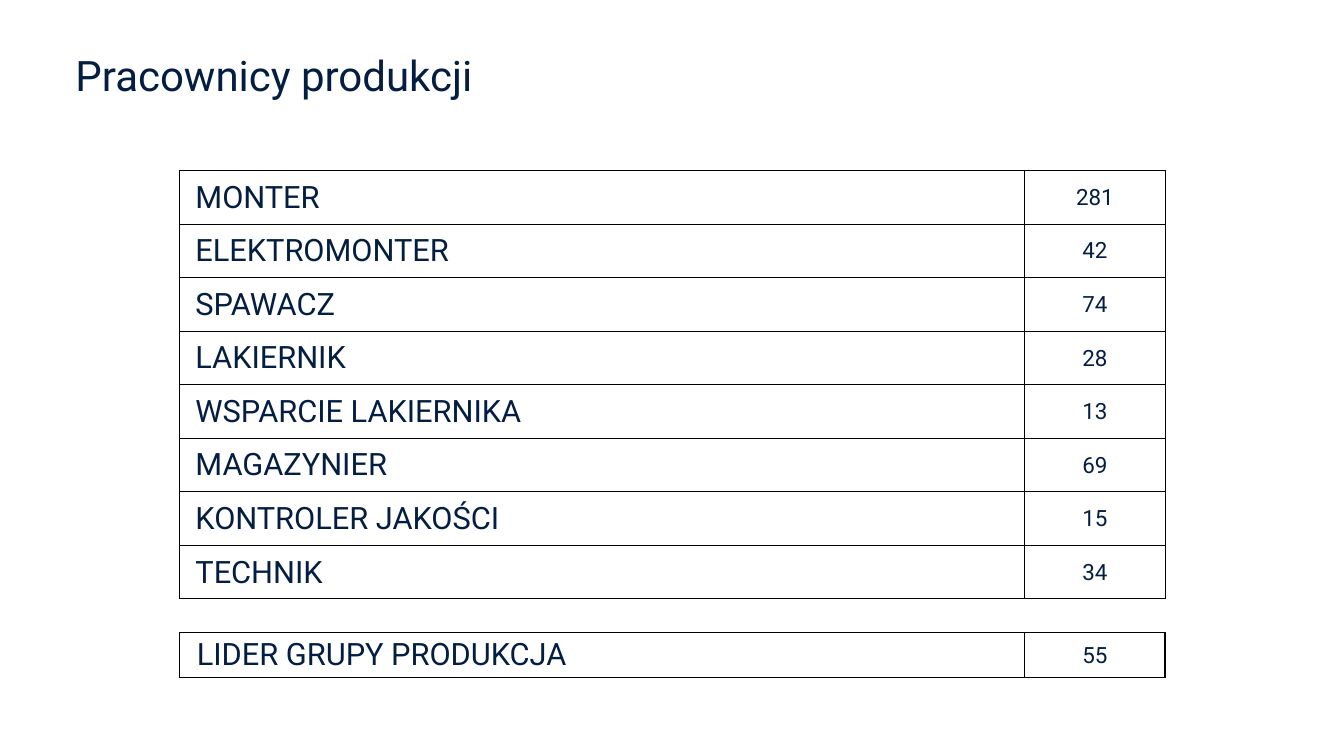
from typing import NamedTuple

from lxml import etree
from pptx import Presentation
from pptx.dml.color import RGBColor
from pptx.enum.text import MSO_ANCHOR, PP_ALIGN
from pptx.oxml.ns import qn
from pptx.util import Pt

NAVY = RGBColor(0x04, 0x1E, 0x42)
BLACK = RGBColor(0x00, 0x00, 0x00)
LEFT, CENTER = PP_ALIGN.LEFT, PP_ALIGN.CENTER
MIDDLE = MSO_ANCHOR.MIDDLE
FONT = "Roboto"
TABLE_LEFT = 128
WIDTHS = (604, 100.2)
SIDES = ("a:lnL", "a:lnR", "a:lnT", "a:lnB")


class Job(NamedTuple):
    name: str
    count: int


class Grid(NamedTuple):
    top: float
    row: float
    line: float
    indent: float
    jobs: list[Job]


STAFF = Grid(121.8, 38.25, 0.5, 11.6, [
    Job("MONTER", 281),
    Job("ELEKTROMONTER", 42),
    Job("SPAWACZ", 74),
    Job("LAKIERNIK", 28),
    Job("WSPARCIE LAKIERNIKA", 13),
    Job("MAGAZYNIER", 69),
    Job("KONTROLER JAKOŚCI", 15),
    Job("TECHNIK", 34),
])
LEADERS = Grid(451.6, 32.4, 1, 12.6, [Job("LIDER GRUPY PRODUKCJA", 55)])


def write(frame, text: str, *, size: float, align=LEFT, spacing: float = 1) -> None:
    frame.word_wrap = True
    para = frame.paragraphs[0]
    para.alignment = align
    para.line_spacing = spacing
    run = para.add_run()
    run.text = text
    run.font.name = FONT
    run.font.size = Pt(size)
    run.font.bold = False
    run.font.color.rgb = NAVY


def border(cell, width: float) -> None:
    """Draw a black line on all four sides; lines must precede the fill."""
    props = cell._tc.get_or_add_tcPr()
    for spot, side in enumerate(SIDES):
        line = etree.Element(qn(side), w=str(int(Pt(width))))
        fill = etree.SubElement(line, qn("a:solidFill"))
        etree.SubElement(fill, qn("a:srgbClr"), val=str(BLACK))
        props.insert(spot, line)


def add_grid(slide, grid: Grid) -> None:
    rows = len(grid.jobs)
    table = slide.shapes.add_table(
        rows, len(WIDTHS), Pt(TABLE_LEFT), Pt(grid.top),
        Pt(sum(WIDTHS)), Pt(rows * grid.row)).table
    table.first_row = False
    table.horz_banding = False
    for column, width in zip(table.columns, WIDTHS):
        column.width = Pt(width)
    for row, job in zip(table.rows, grid.jobs):
        row.height = Pt(grid.row)
        name, count = row.cells
        for cell, inset in ((name, grid.indent), (count, 0.7)):
            cell.fill.background()
            cell.vertical_anchor = MIDDLE
            cell.margin_left = Pt(inset)
            cell.margin_right = cell.margin_top = Pt(0.7)
            cell.margin_bottom = Pt(0)
            border(cell, grid.line)
        write(name.text_frame, job.name, size=22)
        write(count.text_frame, str(job.count), size=16, align=CENTER)


def main() -> None:
    deck = Presentation()
    deck.slide_width, deck.slide_height = Pt(960), Pt(540)
    slide = deck.slides.add_slide(deck.slide_layouts[6])
    title = slide.shapes.add_textbox(Pt(46.8), Pt(36), Pt(704.2), Pt(40.3))
    write(title.text_frame, "Pracownicy produkcji", size=30, spacing=0.9)
    for grid in (STAFF, LEADERS):
        add_grid(slide, grid)
    deck.save("out.pptx")


if __name__ == "__main__":
    main()
